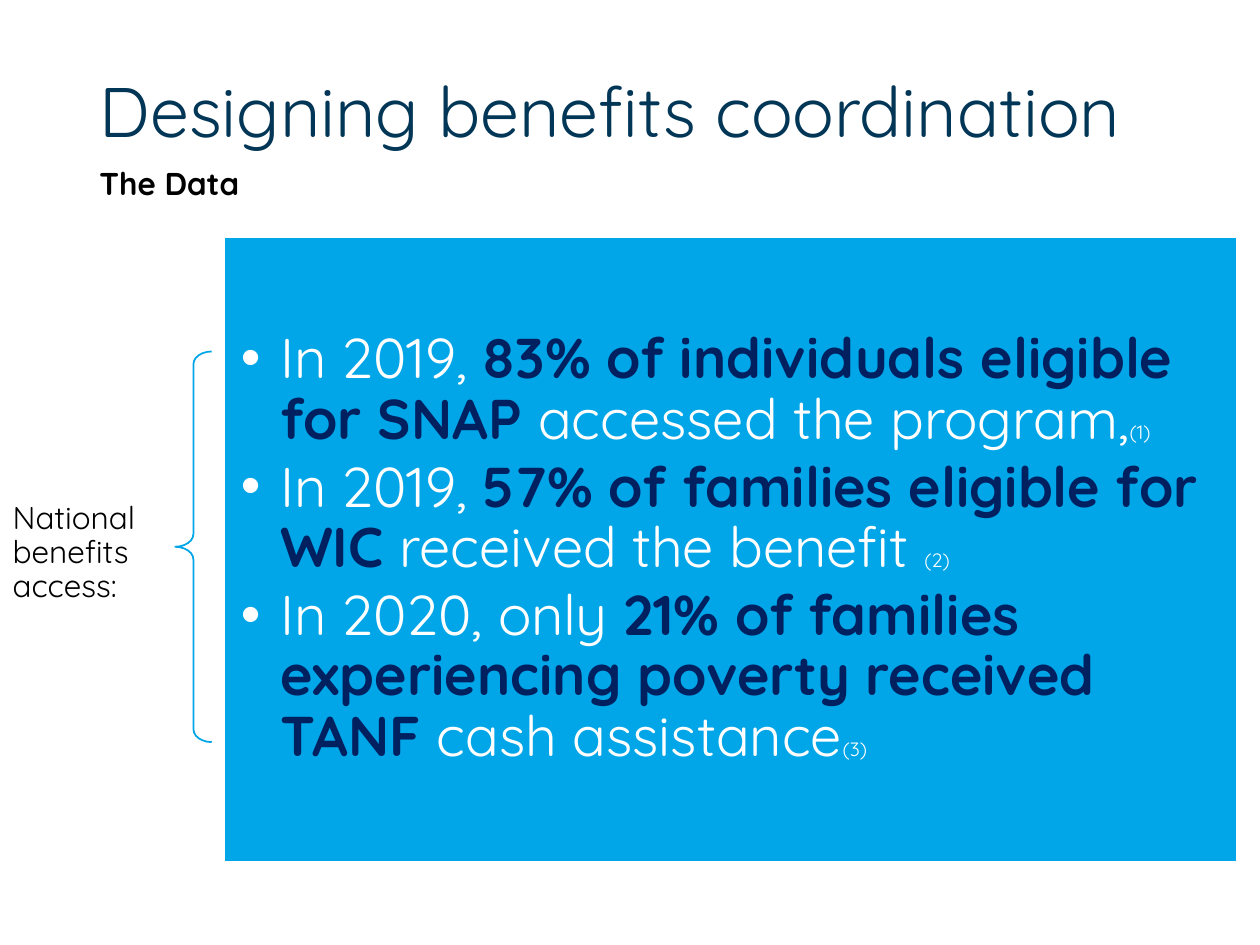
from pptx import Presentation
from pptx import util as u
from pptx.dml.color import RGBColor
from pptx.enum import shapes, text
from lxml import etree

Pt = u.Pt
SKY, NAVY, WHITE, BLACK = "00A6E8", "002060", "FFFFFF", "000000"
A = "{http://schemas.openxmlformats.org/drawingml/2006/main}"


def color(value):
    return RGBColor.from_string(value)


def add_run(paragraph, words, size=18, fill=BLACK, bold=False):
    run = paragraph.add_run()
    run.text = words
    run.font.name = "Quicksand"
    run.font.size = Pt(size)
    run.font.bold = bold
    run.font.color.rgb = color(fill)


deck = Presentation()
deck.slide_width, deck.slide_height = Pt(720), Pt(540)
slide = deck.slides.add_slide(deck.slide_layouts[6])

# Title, subtitle and the label beside the brace
headings = [
    ("Designing benefits coordination", (49.7, 40.3, 670.3, 104.4),
     dict(size=40, fill="023656"), 0.9, 7.2, text.MSO_ANCHOR.TOP),
    ("The Data", (49.7, 90, 255.6, 28.8),
     dict(bold=True), 1.0, 7.2, text.MSO_ANCHOR.TOP),
    ("National benefits access:", (-2.9, 249.1, 102.2, 133.9),
     dict(), 0.9, 10.08, text.MSO_ANCHOR.MIDDLE),
]
for words, place, style, spacing, side_margin, anchor in headings:
    heading = slide.shapes.add_textbox(*map(Pt, place)).text_frame
    heading.word_wrap = True
    heading.vertical_anchor = anchor
    heading.margin_left = heading.margin_right = Pt(side_margin)
    heading.paragraphs[0].line_spacing = spacing
    add_run(heading.paragraphs[0], words, **style)

# Brace linking the label to the findings
brace = slide.shapes.add_shape(shapes.MSO_SHAPE.LEFT_BRACE,
                               Pt(100.1), Pt(200.9), Pt(20.9), Pt(223.2))
brace.adjustments[0] = 0.35
brace.shadow.inherit = False
brace.fill.background()
brace.line.color.rgb = color(SKY)
brace.line.width = Pt(1)

# Blue panel holding the findings
panel = slide.shapes.add_shape(shapes.MSO_SHAPE.RECTANGLE,
                               Pt(128.2), Pt(135.4), Pt(578.9), Pt(357.1))
panel.shadow.inherit = False
panel.fill.solid()
panel.fill.fore_color.rgb = color(SKY)
panel.line.color.rgb = color(WHITE)
panel.line.width = Pt(1)
findings = panel.text_frame
findings.word_wrap = True
findings.vertical_anchor = text.MSO_ANCHOR.MIDDLE
findings.margin_left = findings.margin_right = Pt(9.4)
findings.margin_top = findings.margin_bottom = Pt(9.4)

# Bulleted findings: opening, key figure, ending, footnote mark
benefits = [
    ("In 2019, ", "83% of individuals eligible for SNAP ",
     "accessed the program,", "(1)"),
    ("In 2019, ", "57% of families eligible for WIC ",
     "received the benefit ", "(2)"),
    ("In 2020, only ", "21% of families experiencing poverty received TANF ",
     "cash assistance", "(3)"),
]
for number, (opening, key_figure, ending, footnote) in enumerate(benefits):
    finding = findings.add_paragraph() if number else findings.paragraphs[0]
    finding.alignment = text.PP_ALIGN.LEFT
    finding.line_spacing = 0.9
    finding.space_after = Pt(4)
    props = finding._p.get_or_add_pPr()
    props.set("marL", str(Pt(22.5)))
    props.set("indent", str(Pt(-22.5)))
    etree.SubElement(props, A + "buFont", typeface="Arial")
    etree.SubElement(props, A + "buChar", char="•")
    add_run(finding, opening, size=32, fill=WHITE)
    add_run(finding, key_figure, size=32, fill=NAVY, bold=True)
    add_run(finding, ending, size=32, fill=WHITE)
    add_run(finding, footnote, size=11, fill=WHITE)

deck.save("out.pptx")
